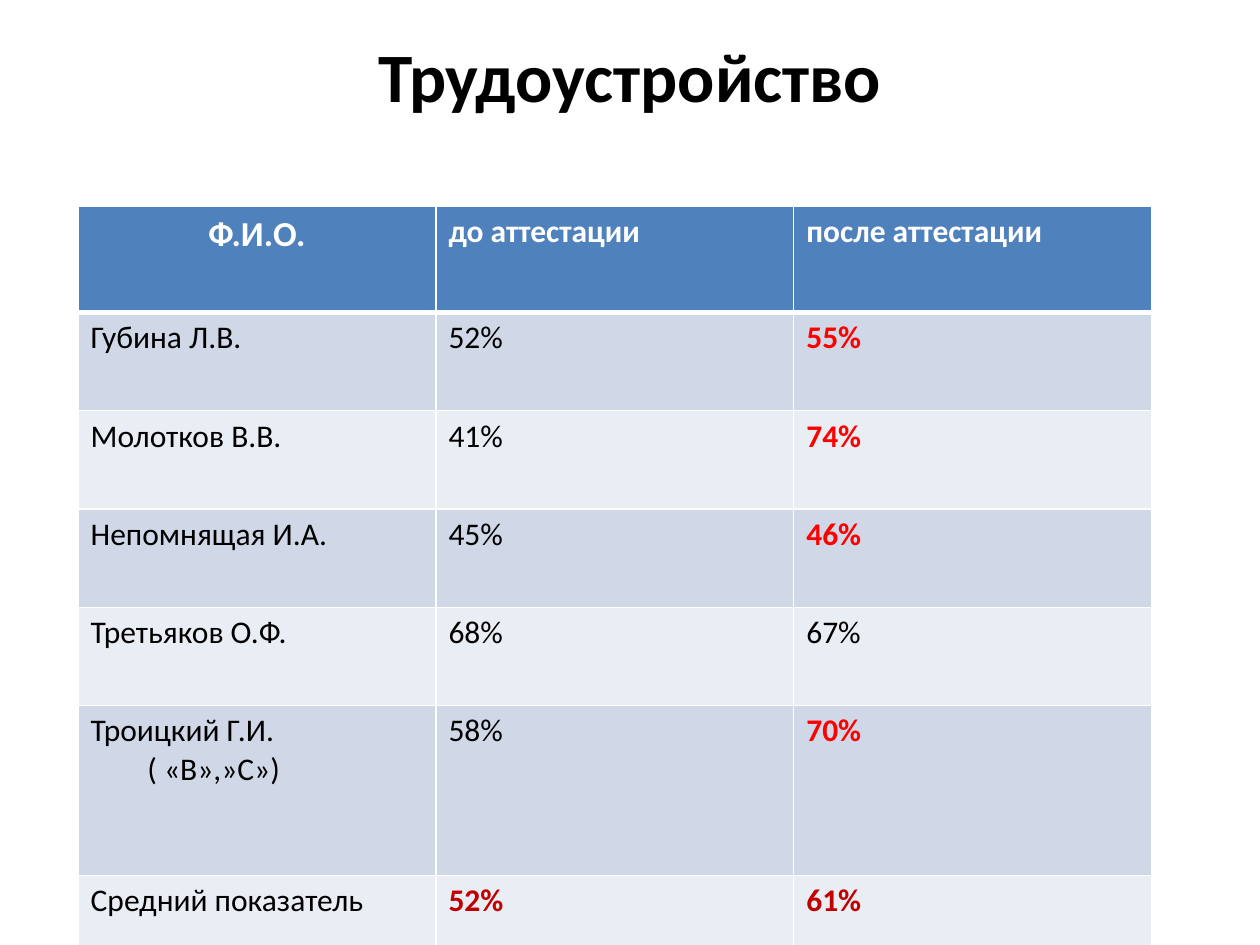
from lxml import etree
from pptx import Presentation
from pptx.dml.color import RGBColor
from pptx.enum import text
from pptx.oxml import ns
from pptx.util import Inches, Pt

COLORS = {
    "white": "FFFFFF",
    "black": "000000",
    "header": "4F81BD",
    "dark_band": "D0D8E8",
    "light_band": "E9EDF4",
    "growth": "FF0000",
    "average": "C00000",
}
FONT = "Calibri"
HEADERS = ["Ф.И.О.", "до аттестации", "после аттестации"]
RESULTS = [
    ("Губина Л.В.", 52, 55),
    ("Молотков В.В.", 41, 74),
    ("Непомнящая И.А.", 45, 46),
    ("Третьяков О.Ф.", 68, 67),
    ("Троицкий Г.И.\n( «В»,»С»)", 58, 70),
    ("Средний показатель", 52, 61),
]
ROW_HEIGHTS = [0.84] + [0.78] * 4 + [1.35] * 2


def rgb(name):
    return RGBColor.from_string(COLORS[name])


def style_text(p, size, color, bold=False):
    p.font.name = FONT
    p.font.size = Pt(size)
    p.font.bold = bold
    p.font.color.rgb = rgb(color)


def set_borders(cell, top, bottom):
    tc_pr = cell._tc.get_or_add_tcPr()
    widths = {"lnL": 1, "lnR": 1, "lnT": top, "lnB": bottom}
    for i, (tag, width) in enumerate(widths.items()):
        ln = etree.Element(ns.qn(f"a:{tag}"), w=str(Pt(width)))
        fill = etree.SubElement(ln, ns.qn("a:solidFill"))
        etree.SubElement(fill, ns.qn("a:srgbClr"), val=COLORS["white"])
        tc_pr.insert(i, ln)


def fill_cell(cell, value, fill, size, color, bold):
    cell.fill.solid()
    cell.fill.fore_color.rgb = rgb(fill)
    cell.text_frame.text = value
    for i, p in enumerate(cell.text_frame.paragraphs):
        style_text(p, size, color, bold)
        if i:
            p._p.get_or_add_pPr().set("marL", str(Inches(0.45)))


def add_title(s, left, top, width, height):
    tf = s.shapes.add_textbox(left, top, width, height).text_frame
    tf.word_wrap = True
    tf.margin_top = 0
    p = tf.paragraphs[0]
    p.text = "Трудоустройство"
    p.alignment = text.PP_ALIGN.CENTER
    style_text(p, 39.6, "black", True)


def add_results(s, left, top, width):
    height = Inches(sum(ROW_HEIGHTS))
    table = s.shapes.add_table(
        len(ROW_HEIGHTS), len(HEADERS), left, top, width, height
    ).table
    for row, row_height in zip(table.rows, ROW_HEIGHTS):
        row.height = Inches(row_height)
    for c, header in enumerate(HEADERS):
        cell = table.cell(0, c)
        fill_cell(cell, header, "header", 18 if c else 20, "white", True)
        set_borders(cell, 1, 3)
    table.cell(0, 0).text_frame.paragraphs[0].alignment = text.PP_ALIGN.CENTER

    for r, (name, before, after) in enumerate(RESULTS, 1):
        band = "dark_band" if r % 2 else "light_band"
        if r == len(RESULTS):
            colors = ["black", "average", "average"]
        else:
            colors = ["black", "black", "growth" if after > before else "black"]
        values = [name, f"{before}%", f"{after}%"]
        for c, (value, color) in enumerate(zip(values, colors)):
            cell = table.cell(r, c)
            fill_cell(cell, value, band, 18, color, color != "black")
            set_borders(cell, 3 if r == 1 else 1, 1)


def main():
    prs = Presentation()
    prs.slide_width, prs.slide_height = Inches(10), Inches(7.5)
    s = prs.slides.add_slide(prs.slide_layouts[6])
    add_title(s, Inches(0.5), Inches(0.26), Inches(9), Inches(1.25))
    add_results(s, Inches(0.62), Inches(1.64), Inches(8.52))
    prs.save("out.pptx")


if __name__ == "__main__":
    main()
